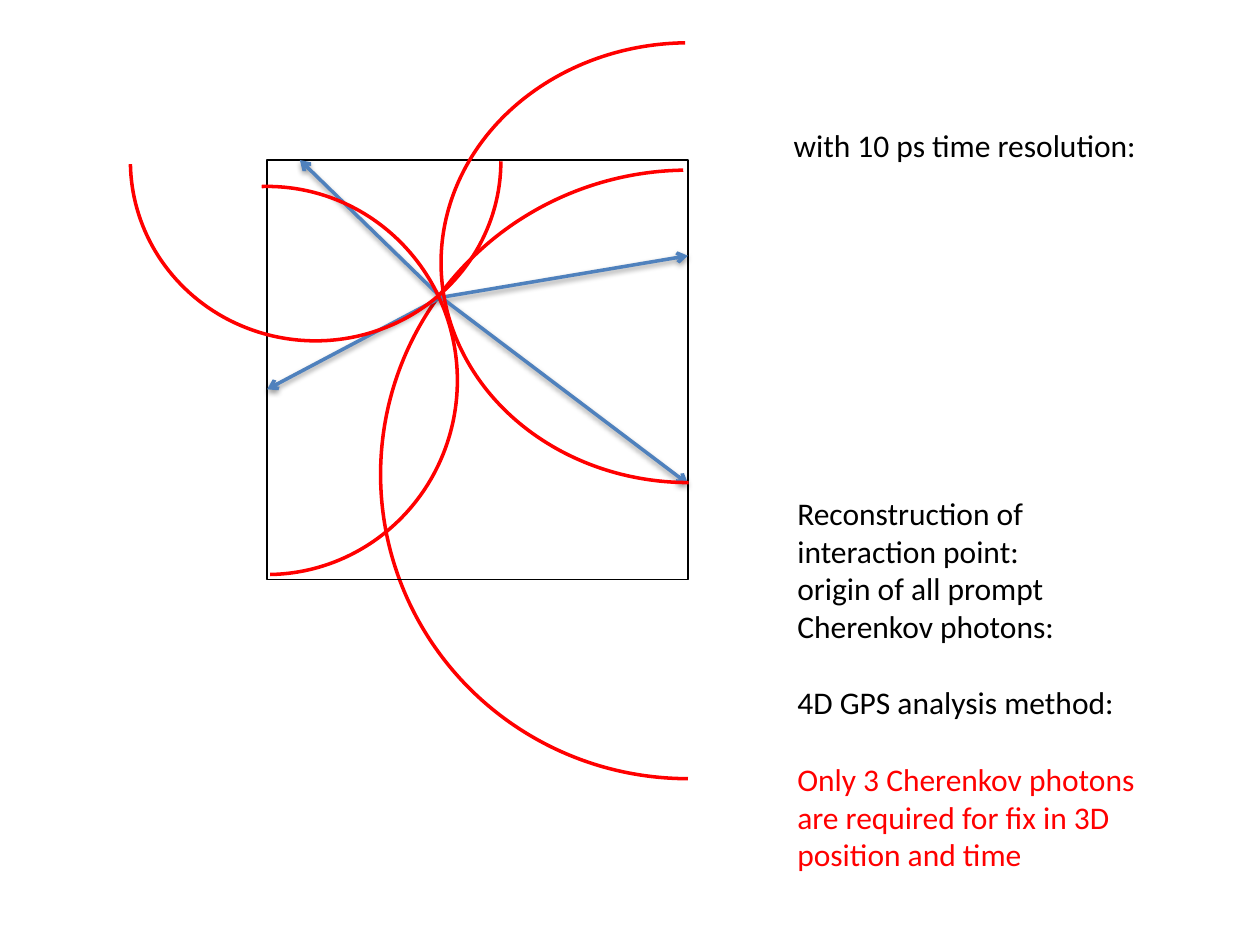
from dataclasses import dataclass

from lxml import etree
from pptx import Presentation
from pptx.dml.color import RGBColor
from pptx.enum.shapes import MSO_CONNECTOR, MSO_SHAPE
from pptx.oxml.ns import qn
from pptx.util import Inches, Pt

ARC = MSO_SHAPE.ARC
RECTANGLE = MSO_SHAPE.RECTANGLE
STRAIGHT = MSO_CONNECTOR.STRAIGHT


@dataclass(frozen=True)
class Theme:
    font: str = "Calibri"
    size: int = 18
    gap: int = 22  # one empty line of text
    black: RGBColor = RGBColor(0, 0, 0)
    red: RGBColor = RGBColor(255, 0, 0)
    blue: RGBColor = RGBColor(0x4F, 0x81, 0xBD)
    thin: float = 0.75
    thick: float = 2


THEME = Theme()
HALF_CIRCLE = (162, 53.46)  # start and end angle, in units of 5/3 degree

ORIGIN = (3.5, 2.36)
PHOTON_HITS = [(2.12, 3.09), (2.38, 1.27), (5.46, 2.03), (5.46, 3.84)]

# left, top, width, height, rotation, start angle
BACK_ARC = (3.02, 1.35, 4.88, 4.83, 180, HALF_CIRCLE[0])
FRONT_ARCS = [
    (3.5, 0.34, 3.93, 3.49, 180, HALF_CIRCLE[0]),
    (1.08, -0.19, 2.85, 2.94, 90, HALF_CIRCLE[0]),
    (0.61, 1.48, 3.02, 3.08, 0, 161.05),
]

# text, colour, space before
RECONSTRUCTION = [
    ("Reconstruction of", THEME.black, 0),
    ("interaction point:", THEME.black, 0),
    ("origin of all prompt", THEME.black, 0),
    ("Cherenkov photons:", THEME.black, 0),
    ("4D GPS analysis method:", THEME.black, THEME.gap),
    ("Only 3 Cherenkov photons", THEME.red, THEME.gap),
    ("are required for fix in 3D position and time", THEME.red, 0),
]


def add_outline(shapes, kind, box, color, width):
    sp = shapes.add_shape(kind, *map(Inches, box))
    sp.shadow.inherit = False
    sp.fill.background()
    sp.line.color.rgb = color
    sp.line.width = Pt(width)
    return sp


def add_arc(shapes, left, top, width, height, rotation, start):
    sp = add_outline(shapes, ARC, (left, top, width, height), THEME.red, THEME.thick)
    sp.adjustments[0] = start
    sp.adjustments[1] = HALF_CIRCLE[1]
    sp.rotation = rotation


def add_arrow(shapes, start, end):
    # The arrows keep the soft shadow of the default connector style
    line = shapes.add_connector(STRAIGHT, *map(Inches, start + end)).line
    line.color.rgb = THEME.blue
    line.width = Pt(THEME.thick)
    etree.SubElement(line._get_or_add_ln(), qn("a:tailEnd"), type="arrow")


def add_text(shapes, box, paragraphs, wrap=True):
    tf = shapes.add_textbox(*map(Inches, box)).text_frame
    tf.word_wrap = wrap
    for i, (text, color, space) in enumerate(paragraphs):
        p = tf.add_paragraph() if i else tf.paragraphs[0]
        p.text = text
        p.space_before = Pt(space)
        p.font.name = THEME.font
        p.font.size = Pt(THEME.size)
        p.font.color.rgb = color


def main():
    prs = Presentation()
    prs.slide_width, prs.slide_height = Inches(10), Inches(7.5)
    s = prs.slides.add_slide(prs.slide_layouts[6])

    add_arc(s.shapes, *BACK_ARC)

    # Detector with photon paths from the interaction point
    detector = s.shapes.add_group_shape().shapes
    add_outline(detector, RECTANGLE, (2.12, 1.27, 3.34, 3.33), THEME.black, THEME.thin)
    for hit in PHOTON_HITS:
        add_arrow(detector, ORIGIN, hit)

    for arc in FRONT_ARCS:
        add_arc(s.shapes, *arc)

    # Explanations
    add_text(s.shapes, (6.23, 3.87, 3.47, 3.13), RECONSTRUCTION)
    add_text(s.shapes, (6.2, 0.95, 2.95, 0.4),
             [("with 10 ps time resolution:", THEME.black, 0)], wrap=False)

    prs.save("out.pptx")


if __name__ == "__main__":
    main()
